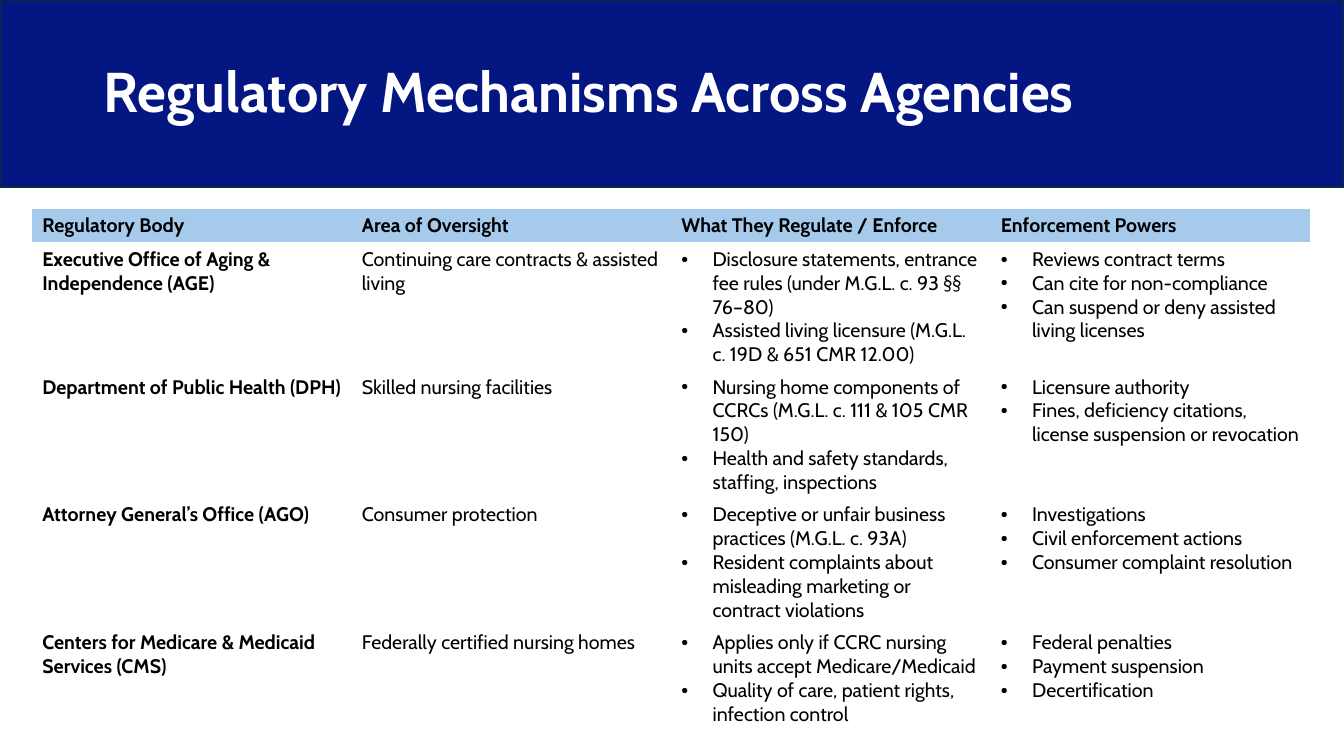
from dataclasses import dataclass

from pptx import Presentation, util as u
from pptx.dml.color import RGBColor
from pptx.enum import shapes, text
from pptx.oxml.ns import qn
from lxml import etree

WIDE, HIGH = u.Inches(13.33), u.Inches(7.5)
PLAIN = "{2D5ABB26-0587-4C30-8999-92F81FD0307C}"  # table style without fill or grid


@dataclass(frozen=True)
class Theme:
    font: str = "Cabin"
    navy: str = "041681"
    edge: str = "092A39"
    sky: str = "A6CAEC"
    ink: str = "000000"
    white: str = "FFFFFF"
    title: int = 40
    body: int = 14


LOOK = Theme()
HEADS = ["Regulatory Body", "Area of Oversight",
         "What They Regulate / Enforce", "Enforcement Powers"]
BODIES = [
    ("Executive Office of Aging & Independence (AGE)",
     "Continuing care contracts & assisted living",
     ["Disclosure statements, entrance fee rules (under M.G.L. c. 93 §§ 76–80)",
      "Assisted living licensure (M.G.L. c. 19D & 651 CMR 12.00)"],
     ["Reviews contract terms", "Can cite for non-compliance",
      "Can suspend or deny assisted living licenses"]),
    ("Department of Public Health (DPH)",
     "Skilled nursing facilities",
     ["Nursing home components of CCRCs (M.G.L. c. 111 & 105 CMR 150)",
      "Health and safety standards, staffing, inspections"],
     ["Licensure authority",
      "Fines, deficiency citations, license suspension or revocation"]),
    ("Attorney General’s Office (AGO)",
     "Consumer protection",
     ["Deceptive or unfair business practices (M.G.L. c. 93A)",
      "Resident complaints about misleading marketing or contract violations"],
     ["Investigations", "Civil enforcement actions",
      "Consumer complaint resolution"]),
    ("Centers for Medicare & Medicaid Services (CMS)",
     "Federally certified nursing homes",
     ["Applies only if CCRC nursing units accept Medicare/Medicaid",
      "Quality of care, patient rights, infection control"],
     ["Federal penalties", "Payment suspension", "Decertification"]),
]


def share(x, y, w, h):
    """Turn shares of the slide's width and height into lengths."""
    return [int(x * WIDE), int(y * HIGH), int(w * WIDE), int(h * HIGH)]


def paint(fill, color):
    fill.solid()
    fill.fore_color.rgb = RGBColor.from_string(color)


def write(para, words, size, color, bold):
    run = para.add_run()
    run.text = words
    form = {"name": LOOK.font, "size": u.Pt(size), "bold": bold}
    for key, value in form.items():
        setattr(run.font, key, value)
    run.font.color.rgb = RGBColor.from_string(color)


def bullet(para):
    props = para._p.get_or_add_pPr()
    indent = u.Inches(0.31)
    props.set("marL", str(indent))
    props.set("indent", str(-indent))
    etree.SubElement(props, qn("a:buFont"), typeface="Arial")
    etree.SubElement(props, qn("a:buChar"), char="•")


def band(slide):
    box = slide.shapes.add_shape(shapes.MSO_SHAPE.RECTANGLE,
                                 *share(0, 0, 1, 0.247))
    box.shadow.inherit = False
    paint(box.fill, LOOK.navy)
    paint(box.line.fill, LOOK.edge)
    box.line.width = u.Pt(1.5)


def title(slide, words):
    frame = slide.shapes.add_textbox(*share(0.07, 0.03, 0.86, 0.19)).text_frame
    form = {"word_wrap": True, "vertical_anchor": text.MSO_ANCHOR.MIDDLE}
    for key, value in form.items():
        setattr(frame, key, value)
    para = frame.paragraphs[0]
    para.line_spacing = 0.9
    write(para, words, LOOK.title, LOOK.white, True)


def fill_cell(cell, content, bold, color=None):
    """Write one text, or a list of texts as bullets."""
    if color:
        paint(cell.fill, color)
    else:
        cell.fill.background()
    listed = isinstance(content, list)
    frame = cell.text_frame
    for i, words in enumerate(content if listed else [content]):
        para = frame.add_paragraph() if i else frame.paragraphs[0]
        if listed:
            bullet(para)
        write(para, words, LOOK.body, LOOK.ink, bold)


def grid(slide, heads, bodies):
    area = share(0.024, 0.276, 0.951, 0.72)
    table = slide.shapes.add_table(len(bodies) + 1, len(heads), *area).table
    table.first_row = table.horz_banding = False
    table._tbl.tblPr.find(qn("a:tableStyleId")).text = PLAIN
    for row in table.rows:
        row.height = u.Inches(1.23)
    table.rows[0].height = u.Inches(0.33)
    for c, head in enumerate(heads):
        fill_cell(table.cell(0, c), head, True, LOOK.sky)
        for r, body in enumerate(bodies, 1):
            fill_cell(table.cell(r, c), body[c], c == 0)


def main():
    deck = Presentation()
    deck.slide_width, deck.slide_height = WIDE, HIGH
    slide = deck.slides.add_slide(deck.slide_layouts[6])
    band(slide)
    title(slide, "Regulatory Mechanisms Across Agencies")
    grid(slide, HEADS, BODIES)
    deck.save("out.pptx")


if __name__ == "__main__":
    main()
